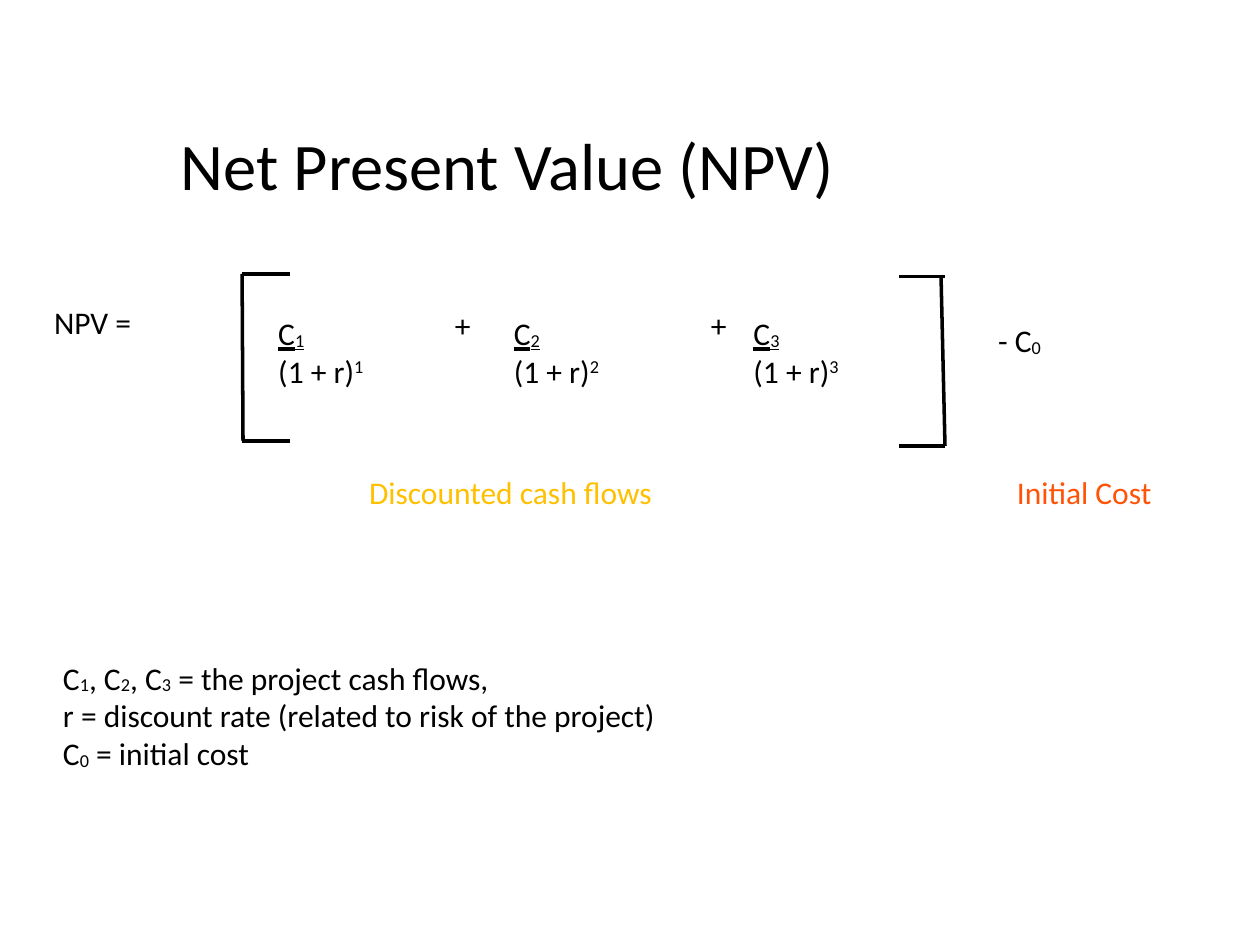
import lxml.etree
import pptx
import pptx.dml.color
import pptx.enum.shapes
import pptx.enum.text
import pptx.oxml.ns
import pptx.util

Cm = pptx.util.Cm
FONT = "Calibri"
BLACK, GOLD, ORANGE = "000000", "FFC000", "FF5308"
SUBSCRIPT, SUPERSCRIPT = -6000, 32000
LINE_HEIGHT = 0.76


def rgb(hex_color):
    return pptx.dml.color.RGBColor.from_string(hex_color)


def add_run(paragraph, text, baseline=0, underline=False, size=18, color=BLACK):
    run = paragraph.add_run()
    run.text = text
    run.font.name = FONT
    run.font.size = pptx.util.Pt(size)
    run.font.color.rgb = rgb(color)
    if underline:
        run.font.underline = True
    if baseline:
        run._r.get_or_add_rPr().set("baseline", str(baseline))


def add_text(slide, box, lines, color=BLACK, wrap=False):
    """Place lines in a box; each line is a list of (text, baseline, underline) runs."""
    frame = slide.shapes.add_textbox(*map(Cm, box)).text_frame
    frame.margin_left = frame.margin_right = frame.margin_top = frame.margin_bottom = 0
    frame.vertical_anchor = pptx.enum.text.MSO_ANCHOR.MIDDLE
    frame.word_wrap = wrap
    if not wrap:
        frame.auto_size = pptx.enum.text.MSO_AUTO_SIZE.SHAPE_TO_FIT_TEXT
    for index, line in enumerate(lines):
        paragraph = frame.add_paragraph() if index else frame.paragraphs[0]
        for run in line:
            add_run(paragraph, *run, color=color)


def add_line(slide, start, end):
    line = slide.shapes.add_connector(
        pptx.enum.shapes.MSO_CONNECTOR.STRAIGHT, *map(Cm, start + end))
    line.line.color.rgb = rgb(BLACK)
    line.line.width = pptx.util.Pt(2)
    lxml.etree.SubElement(line._element.spPr, pptx.oxml.ns.qn("a:effectLst"))


def add_bracket(slide, box, top_inset=0, bottom_inset=0):
    """Draw a square bracket; a negative width opens it to the left."""
    edge, top, arm, height = box
    bottom = top + height
    add_line(slide, (edge + top_inset, top), (edge + bottom_inset, bottom))
    for y in (top, bottom):
        add_line(slide, (edge, y), (edge + arm, y))


def add_title(slide, box):
    title = slide.shapes.title
    title.left, title.top, title.width, title.height = map(Cm, box)
    title.text_frame.vertical_anchor = pptx.enum.text.MSO_ANCHOR.MIDDLE
    paragraph = title.text_frame.paragraphs[0]
    paragraph.alignment = pptx.enum.text.PP_ALIGN.CENTER
    add_run(paragraph, "Net Present Value (NPV)", size=38)


def add_formula(slide, box):
    left, top, width, height = box
    add_text(slide, (left, top + 0.63, 1.88, LINE_HEIGHT), [[("NPV =",)]])
    for period, offset in enumerate((4.52, 9.27, 14.1), start=1):
        add_text(slide, (left + offset, top + 0.83, 1.78, 1.55), [
            [("C", 0, True), (str(period), SUBSCRIPT, True)],
            [("(1 + r)",), (str(period), SUPERSCRIPT)],
        ])
    for offset in (8.08, 13.24):
        add_text(slide, (left + offset, top + 0.68, 0.33, LINE_HEIGHT), [[("+",)]])
    add_bracket(slide, (left + 3.79, top + 0.03, 0.96, height - 0.13), bottom_inset=0.02)
    add_bracket(slide, (left + 17.96, top + 0.08, -0.93, height - 0.08), top_inset=-0.08)
    add_text(slide, (left + width - 0.91, top + 0.99, 0.91, LINE_HEIGHT),
             [[("- C",), ("0", SUBSCRIPT)]])


def add_captions(slide, box):
    left, top, width, height = box
    add_text(slide, (left, top + (height - LINE_HEIGHT) / 2, 5.77, LINE_HEIGHT),
             [[("Discounted cash flows",)]], GOLD)
    add_text(slide, (left + width - 2.9, top, 2.9, height),
             [[("Initial Cost",)]], ORANGE, wrap=True)


def add_legend(slide, box):
    add_text(slide, box, [
        [("C",), ("1", SUBSCRIPT), (", C",), ("2", SUBSCRIPT),
         (", C",), ("3", SUBSCRIPT), (" = the project cash flows,",)],
        [("r = discount rate (related to risk of the project)",)],
        [("C",), ("0", SUBSCRIPT), (" = initial cost",)],
    ], wrap=True)


def main():
    presentation = pptx.Presentation()
    presentation.slide_width, presentation.slide_height = Cm(25.4), Cm(19.05)
    slide = presentation.slides.add_slide(
        presentation.slide_layouts.get_by_name("Title Only"))
    add_title(slide, (1.02, 1.07, 18.42, 4.45))
    add_formula(slide, (1.09, 5.49, 19.94, 3.5))
    add_captions(slide, (7.44, 8.59, 15.96, 2.64))
    add_legend(slide, (1.27, 12.5, 20.45, 3.84))
    presentation.save("out.pptx")


if __name__ == "__main__":
    main()
